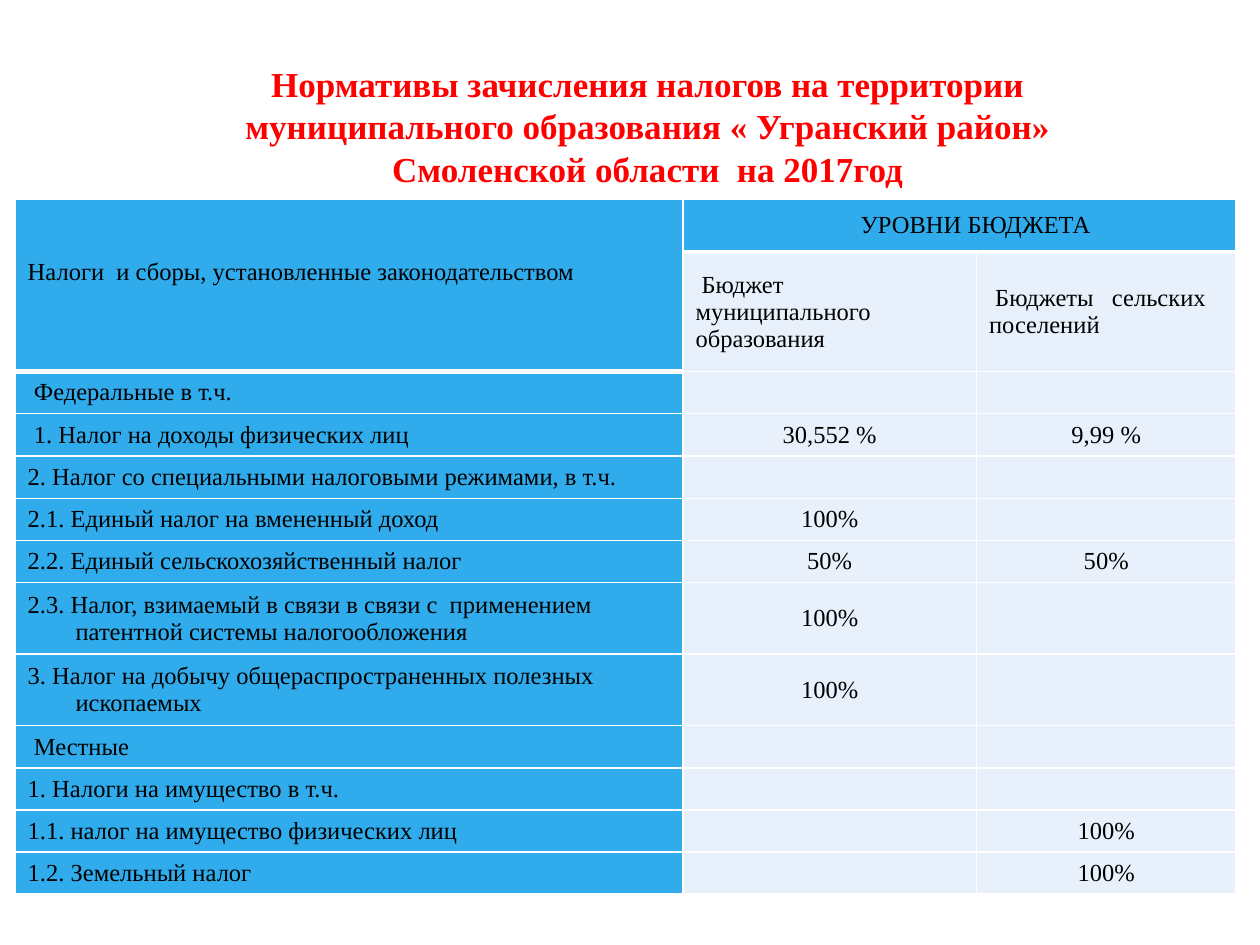
from lxml.etree import SubElement
from pptx import Presentation
from pptx.dml.color import RGBColor
from pptx.enum.text import MSO_ANCHOR, PP_ALIGN
from pptx.oxml import parse_xml
from pptx.oxml.ns import nsdecls, qn
from pptx.util import Inches, Pt

RED = RGBColor(0xFF, 0x00, 0x00)
BLACK = RGBColor(0x00, 0x00, 0x00)
BLUE = RGBColor(0x30, 0xAC, 0xEC)
PALE_BLUE = RGBColor(0xE8, 0xF1, 0xFB)
WHITE = RGBColor(0xFF, 0xFF, 0xFF)
FONT = "Times New Roman"

TITLE = ("Нормативы зачисления налогов на территории муниципального образования "
         "« Угранский район» Смоленской области  на 2017год")
COLUMN_WIDTHS = [5.3, 2.33, 2.06]
ROW_HEIGHTS = [0.42, 0.95, 0.33, 0.33, 0.34, 0.33, 0.31, 0.55, 0.53] + [0.33] * 4
ROWS = [
    ("Налоги  и сборы, установленные законодательством", "УРОВНИ БЮДЖЕТА", ""),
    ("", " Бюджет  муниципального образования", " Бюджеты   сельских поселений"),
    (" Федеральные в т.ч.", "", ""),
    (" 1. Налог на доходы физических лиц", "30,552 %", "9,99 %"),
    ("2. Налог со специальными налоговыми режимами, в т.ч.", "", ""),
    ("2.1. Единый налог на вмененный доход", "100%", ""),
    ("2.2. Единый сельскохозяйственный налог", "50%", "50%"),
    ("2.3. Налог, взимаемый в связи в связи с  применением "
     "патентной системы налогообложения", "100%", ""),
    ("3. Налог на добычу общераспространенных полезных ископаемых", "100%", ""),
    (" Местные", "", ""),
    ("1. Налоги на имущество в т.ч.", "", ""),
    ("1.1. налог на имущество физических лиц", "", "100%"),
    ("1.2. Земельный налог", "", "100%"),
]


def format_span(span, size, color, bold=False):
    span.font.name = FONT
    span.font.size = Pt(size)
    span.font.bold = bold
    span.font.color.rgb = color


def set_borders(cell, top, bottom):
    """Draw white cell edges; top and bottom are widths in points."""
    properties = cell._tc.get_or_add_tcPr()
    edges = [("lnL", 1), ("lnR", 1), ("lnT", top), ("lnB", bottom)]
    for position, (edge, width) in enumerate(edges):
        properties.insert(position, parse_xml(
            f'<a:{edge} {nsdecls("a")} w="{Pt(width)}"><a:solidFill>'
            f'<a:srgbClr val="{WHITE}"/></a:solidFill></a:{edge}>'))


deck = Presentation()
deck.slide_width = Inches(10)
deck.slide_height = Inches(7.5)
page = deck.slides.add_slide(deck.slide_layouts[6])

title_box = page.shapes.add_textbox(Inches(1.14), Inches(0.21), Inches(8), Inches(1.58))
title_frame = title_box.text_frame
title_frame.word_wrap = True
title_frame.vertical_anchor = MSO_ANCHOR.MIDDLE
title_frame.margin_left = title_frame.margin_right = Inches(0.4)
title_frame.text = TITLE
title_frame.paragraphs[0].alignment = PP_ALIGN.CENTER
format_span(title_frame.paragraphs[0].runs[0], 20, RED, bold=True)

tax_table = page.shapes.add_table(
    len(ROWS), len(COLUMN_WIDTHS), Inches(0.12), Inches(1.58),
    Inches(sum(COLUMN_WIDTHS)), Inches(sum(ROW_HEIGHTS))).table
for column, width in zip(tax_table.columns, COLUMN_WIDTHS):
    column.width = Inches(width)
for row, height in zip(tax_table.rows, ROW_HEIGHTS):
    row.height = Inches(height)

for row_index, texts in enumerate(ROWS):
    for column_index, text in enumerate(texts):
        cell = tax_table.cell(row_index, column_index)
        is_heading = row_index == 0 or column_index == 0
        cell.vertical_anchor = MSO_ANCHOR.MIDDLE
        cell.fill.solid()
        cell.fill.fore_color.rgb = BLUE if is_heading else PALE_BLUE
        header_end = 1 if column_index == 0 else 0
        set_borders(cell, top=3 if row_index == header_end + 1 else 1,
                    bottom=3 if row_index == header_end else 1)

        para = cell.text_frame.paragraphs[0]
        if text:
            para.text = text
            format_span(para.runs[0], 14, BLACK)
        else:
            SubElement(para._p, qn("a:endParaRPr"), sz="1400")
        if column_index == 0:
            indent = para._p.get_or_add_pPr()
            indent.set("marL", str(Inches(0.38)))
            indent.set("indent", str(Inches(-0.38)))
        elif row_index > 1:
            para.alignment = PP_ALIGN.CENTER

tax_heading = tax_table.cell(0, 0)
tax_heading.margin_bottom = Inches(0.26)
tax_heading.merge(tax_table.cell(1, 0))
levels_heading = tax_table.cell(0, 1)
levels_heading.margin_left = Inches(1.41)
levels_heading.merge(tax_table.cell(0, 2))

deck.save("out.pptx")
